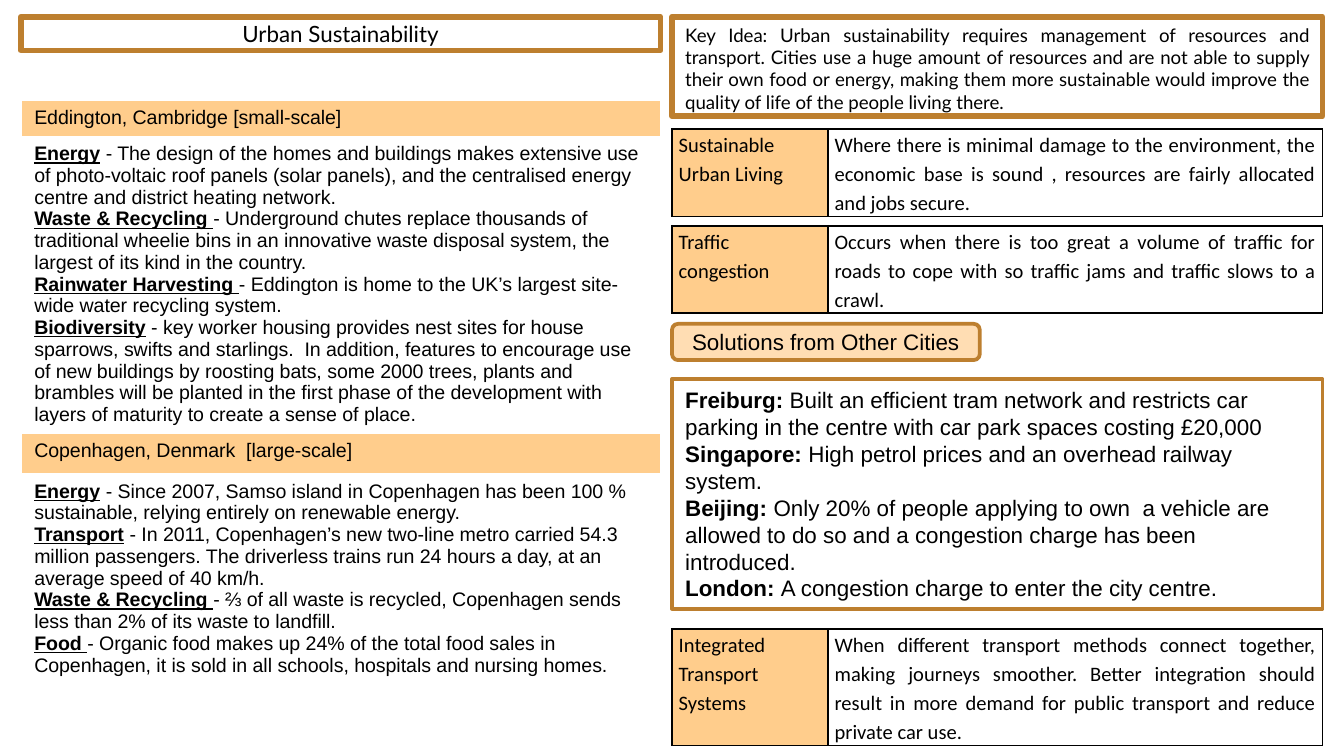
from dataclasses import dataclass

from lxml import etree
from pptx import Presentation
from pptx.dml.color import RGBColor
from pptx.enum.shapes import MSO_SHAPE
from pptx.enum.text import MSO_ANCHOR, PP_ALIGN
from pptx.oxml.ns import qn
from pptx.util import Inches, Pt

RECT, ROUND = MSO_SHAPE.RECTANGLE, MSO_SHAPE.ROUNDED_RECTANGLE
TOP, MIDDLE = MSO_ANCHOR.TOP, MSO_ANCHOR.MIDDLE
LEFT, CENTER, JUSTIFY = PP_ALIGN.LEFT, PP_ALIGN.CENTER, PP_ALIGN.JUSTIFY
UNIT = 0.1
WIDE, HIGH = 100, 56.25


@dataclass(frozen=True)
class Theme:
    """Colours, faces and type sizes."""
    white: str = "FFFFFF"
    black: str = "000000"
    edge: str = "BD7F2F"
    band: str = "FFCD8C"
    pale: str = "FFDDB3"
    lato: str = "Lato"
    arial: str = "Arial"
    term: str = "Calibri"
    head: float = 12
    key: float = 10
    note: float = 10.5
    word: float = 11


THEME = Theme()

EDDINGTON = [
    ("Energy", " - The design of the homes and buildings makes extensive use of photo-voltaic roof panels "
               "(solar panels), and the centralised energy centre and district heating network."),
    ("Waste & Recycling ", "- Underground chutes replace thousands of traditional wheelie bins in an "
                           "innovative waste disposal system, the largest of its kind in the country."),
    ("Rainwater Harvesting ", "- Eddington is home to the UK’s largest site-wide water recycling system."),
    ("Biodiversity", " - key worker housing provides nest sites for house sparrows, swifts and starlings.  In "
                     "addition, features to encourage use of new buildings by roosting bats, some 2000 trees, "
                     "plants and brambles will be planted in the first phase of the development with layers "
                     "of maturity to create a sense of place."),
]
DENMARK = [
    ("Energy", " - Since 2007, Samso island in Copenhagen has been 100 % sustainable, relying entirely on "
               "renewable energy."),
    ("Transport", " - In 2011, Copenhagen’s new two-line metro carried 54.3 million passengers. The driverless "
                  "trains run 24 hours a day, at an average speed of 40 km/h."),
    ("Waste & Recycling ", "- ⅔ of all waste is recycled, Copenhagen sends less than 2% of its waste to landfill."),
    ("Food ", "- Organic food makes up 24% of the total food sales in Copenhagen, it is sold in all schools, "
              "hospitals and nursing homes."),
]
CASES = [
    ("Eddington, Cambridge [small-scale]", 2.7, THEME.band),
    (EDDINGTON, 22.1, None),
    ("Copenhagen, Denmark  [large-scale]", 3, THEME.band),
    (DENMARK, 18.4, None),
]
CITIES = [
    ("Freiburg:", " Built an efficient tram network and restricts car parking in the centre with car park "
                  "spaces costing £20,000"),
    ("Singapore: ", "High petrol prices and an overhead railway system."),
    ("Beijing: ", "Only 20% of people applying to own  a vehicle are allowed to do so and a congestion charge "
                  "has been introduced."),
    ("London: ", "A congestion charge to enter the city centre."),
]
KEY = ("Key Idea: Urban sustainability requires management of resources and transport. Cities use a huge amount "
       "of resources and are not able to supply their own food or energy, making them more sustainable would "
       "improve the quality of life of the people living there. ")
TERMS = [
    (9.6, 6.2, "Sustainable Urban Living",
     "Where there is minimal damage to the environment, the economic base is sound , resources are fairly "
     "allocated and jobs secure."),
    (16.8, 6.2, "Traffic congestion",
     "Occurs when there is too great a volume of traffic for roads to cope with so traffic jams and traffic "
     "slows to a crawl."),
    (46.8, 8.3, "Integrated Transport Systems",
     "When different transport methods connect together, making journeys smoother. Better integration should "
     "result in more demand for public transport and reduce private car use."),
]


def span(count):
    """Turn grid units into a length."""
    return Inches(count * UNIT)


def paint(fill, color):
    """Fill with a colour, or with nothing."""
    if color:
        fill.solid()
        fill.fore_color.rgb = RGBColor.from_string(color)
    else:
        fill.background()


def write(frame, text, face, size, align=LEFT, line=False, pitch=None):
    """Write plain text, or pairs of bold lead and body."""
    frame.word_wrap = True
    items = [("", text)] if isinstance(text, str) else text
    for index, (lead, body) in enumerate(items):
        para = frame.paragraphs[0] if index == 0 else frame.add_paragraph()
        para.alignment = align
        para.line_spacing = pitch
        font = para.font
        font.name, font.size = face, Pt(size)
        font.color.rgb = RGBColor.from_string(THEME.black)
        if lead:
            run = para.add_run()
            run.text = lead
            run.font.bold = True
            if line:
                run.font.underline = True
        para.add_run().text = body


def panel(slide, box, text, face, size, width, align=LEFT, anchor=MIDDLE, kind=RECT, color=THEME.white):
    """Draw an outlined panel of text in its box."""
    shape = slide.shapes.add_shape(kind, *map(span, box))
    shape.shadow.inherit = False
    paint(shape.fill, color)
    paint(shape.line.fill, THEME.edge)
    shape.line.width = Pt(width)
    shape.text_frame.vertical_anchor = anchor
    write(shape.text_frame, text, face, size, align)


def grid(slide, box, rows, cols):
    """Add a plain table with the given row and column spans."""
    table = slide.shapes.add_table(len(rows), len(cols), *map(span, box)).table
    table.first_row = table.horz_banding = False
    for row, high in zip(table.rows, rows):
        row.height = span(high)
    for col, wide in zip(table.columns, cols):
        col.width = span(wide)
    return table


def border(cell):
    """Rule all four sides of a cell."""
    props = cell._tc.get_or_add_tcPr()
    for side in ("lnL", "lnR", "lnT", "lnB"):
        line = etree.SubElement(props, qn("a:" + side), w=str(Pt(1)))
        fill = etree.SubElement(line, qn("a:solidFill"))
        etree.SubElement(fill, qn("a:srgbClr"), val=THEME.black)


def term(slide, box, name, sense):
    """Place a term beside its meaning."""
    table = grid(slide, box, [box[3]], [11.6, box[2] - 11.6])
    parts = [(name, LEFT, THEME.band), (sense, JUSTIFY, THEME.white)]
    for cell, (text, align, color) in zip(table.rows[0].cells, parts):
        border(cell)
        paint(cell.fill, color)
        cell.margin_left = cell.margin_right = span(0.5)
        cell.margin_top = cell.margin_bottom = 0
        write(cell.text_frame, text, THEME.term, THEME.word, align, pitch=1.15)


def cases(slide, box):
    """Stack the case studies under their bands."""
    table = grid(slide, box, [high for _, high, _ in CASES], [box[2]])
    for index, (text, _, color) in enumerate(CASES):
        cell = table.cell(index, 0)
        paint(cell.fill, color)
        write(cell.text_frame, text, THEME.arial, THEME.note, line=True)


def left(slide, x, wide):
    """Build the title and case study column."""
    panel(slide, (x, 1.25, wide, 2.5), "Urban Sustainability", THEME.lato, THEME.head, 3, CENTER)
    cases(slide, (x, 7.45, wide, 46.2))


def right(slide, x, wide):
    """Build the key idea, terms and cities column."""
    panel(slide, (x, 1.25, wide, 7.4), KEY, THEME.lato, THEME.key, 3, JUSTIFY, TOP)
    panel(slide, (x, 24.1, 22.9, 2.7), "Solutions from Other Cities", THEME.arial, THEME.head, 2,
          CENTER, kind=ROUND, color=THEME.pale)
    panel(slide, (x, 28.2, wide, 17.1), CITIES, THEME.arial, THEME.head, 2)
    for y, high, name, sense in TERMS:
        term(slide, (x, y, wide, high), name, sense)


def main():
    """Build and save the slide."""
    deck = Presentation()
    deck.slide_width, deck.slide_height = span(WIDE), span(HIGH)
    slide = deck.slides.add_slide(deck.slide_layouts[6])
    left(slide, 1.55, 47.6)
    right(slide, 50, 48.4)
    deck.save("out.pptx")


if __name__ == "__main__":
    main()
